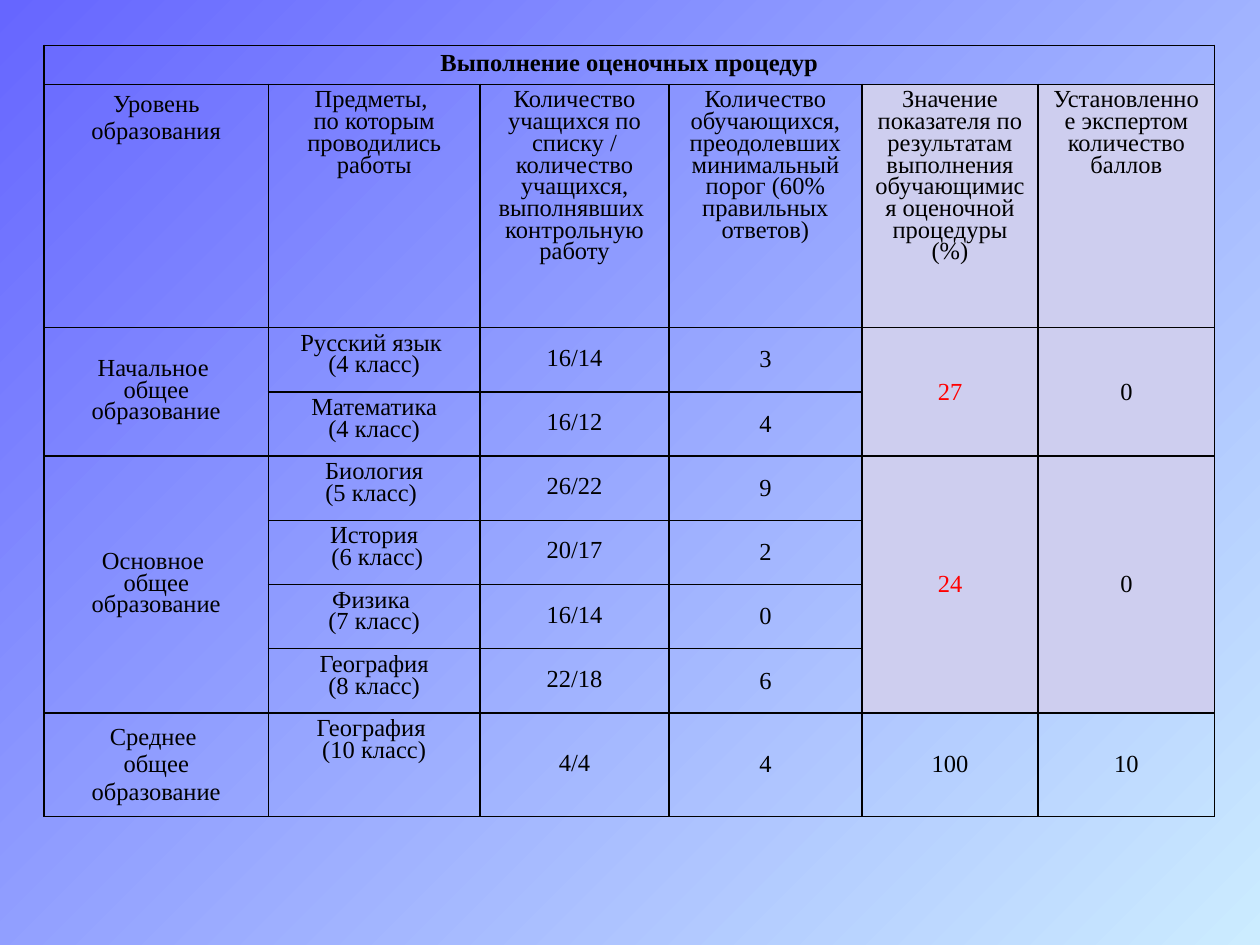
from dataclasses import dataclass

from lxml.etree import SubElement
from pptx import Presentation
from pptx.dml.color import RGBColor
from pptx.enum.text import MSO_ANCHOR, PP_ALIGN
from pptx.oxml.ns import qn
from pptx.util import Inches, Pt


@dataclass(frozen=True)
class Theme:
    font: str = "Times New Roman"
    size: int = 14
    border_width: int = 1
    text: str = "000000"
    accent: str = "FF0000"
    highlight: str = "CECEEF"
    gradient_start: str = "6666FF"
    gradient_end: str = "CCECFF"


def add_borders(cell):
    properties = cell._tc.get_or_add_tcPr()
    for side in ("a:lnL", "a:lnR", "a:lnT", "a:lnB"):
        line = SubElement(properties, qn(side), w=str(Pt(theme.border_width)))
        fill = SubElement(line, qn("a:solidFill"))
        SubElement(fill, qn("a:srgbClr"), val=theme.text)


theme = Theme()

presentation = Presentation()
presentation.slide_width = Inches(10)
presentation.slide_height = Inches(7.5)
slide = presentation.slides.add_slide(presentation.slide_layouts[6])

background = slide.background.fill
background.gradient()
background.gradient_angle = 315
for stop, color in zip(background.gradient_stops, (theme.gradient_start, theme.gradient_end)):
    stop.color.rgb = RGBColor.from_string(color)

rows = [
    ["Выполнение оценочных процедур", "", "", "", "", ""],
    [
        "Уровень\nобразования",
        "Предметы, \nпо которым проводились работы",
        "Количество учащихся по списку / количество учащихся, выполнявших \nконтрольную работу",
        "Количество обучающихся, преодолевших минимальный порог (60% правильных ответов)",
        "Значение показателя по результатам выполнения обучающимися оценочной процедуры (%)",
        "Установленное экспертом количество баллов",
    ],
    ["Начальное \nобщее образование", "Русский язык \n(4 класс)", "16/14", "3", "27", "0"],
    ["", "Математика\n(4 класс)", "16/12", "4", "", ""],
    ["Основное \nобщее образование", "Биология\n(5 класс) ", "26/22", "9", "24", "0"],
    ["", "История\n (6 класс)", "20/17", "2", "", ""],
    ["", "Физика \n(7 класс)", "16/14", "0", "", ""],
    ["", "География\n(8 класс)", "22/18", "6", "", ""],
    ["Среднее \nобщее образование", "География \n(10 класс)", "4/4", "4", "100", "10"],
]
column_widths = [1.78, 1.68, 1.5, 1.53, 1.4, 1.4]
row_heights = [0.31, 1.93] + [0.51] * 6 + [0.82]
last_row = len(rows) - 1

table_frame = slide.shapes.add_table(
    len(rows), len(column_widths), Inches(0.35), Inches(0.36), Inches(9.29), Inches(6.3)
)
table = table_frame.table
table.first_row = False
table.horz_banding = False
for column, width in zip(table.columns, column_widths):
    column.width = Inches(width)
for row, height in zip(table.rows, row_heights):
    row.height = Inches(height)
table_frame.height = Inches(6.3)

table.cell(0, 0).merge(table.cell(0, 5))
for first, last in ((2, 3), (4, 7)):
    for column_index in (0, 4, 5):
        table.cell(first, column_index).merge(table.cell(last, column_index))

for row_index, texts in enumerate(rows):
    for column_index, text in enumerate(texts):
        cell = table.cell(row_index, column_index)
        add_borders(cell)
        if column_index >= 4 and 1 <= row_index < last_row:
            cell.fill.solid()
            cell.fill.fore_color.rgb = RGBColor.from_string(theme.highlight)
        else:
            cell.fill.background()

        is_value = row_index >= 2 and column_index >= 2
        is_top = row_index == 1 or (row_index >= 2 and column_index == 1)
        is_loose = (row_index >= 2 and column_index >= 3) or (
            column_index == 0 and row_index in (1, last_row)
        )
        is_accent = column_index == 4 and 2 <= row_index < last_row
        cell.vertical_anchor = MSO_ANCHOR.TOP if is_top else MSO_ANCHOR.MIDDLE
        cell.margin_left = cell.margin_right = Inches(0.07 if is_value else 0.1)
        cell.margin_top = cell.margin_bottom = Inches(0 if is_value else 0.05)

        cell.text_frame.text = text
        for paragraph in cell.text_frame.paragraphs:
            paragraph.alignment = PP_ALIGN.CENTER
            paragraph.line_spacing = 1.0 if is_loose else 0.8
            paragraph.font.size = Pt(theme.size)
            for run in paragraph.runs:
                run.font.name = theme.font
                run.font.size = Pt(theme.size)
                run.font.bold = row_index == 0
                run.font.color.rgb = RGBColor.from_string(theme.accent if is_accent else theme.text)

presentation.save("out.pptx")
